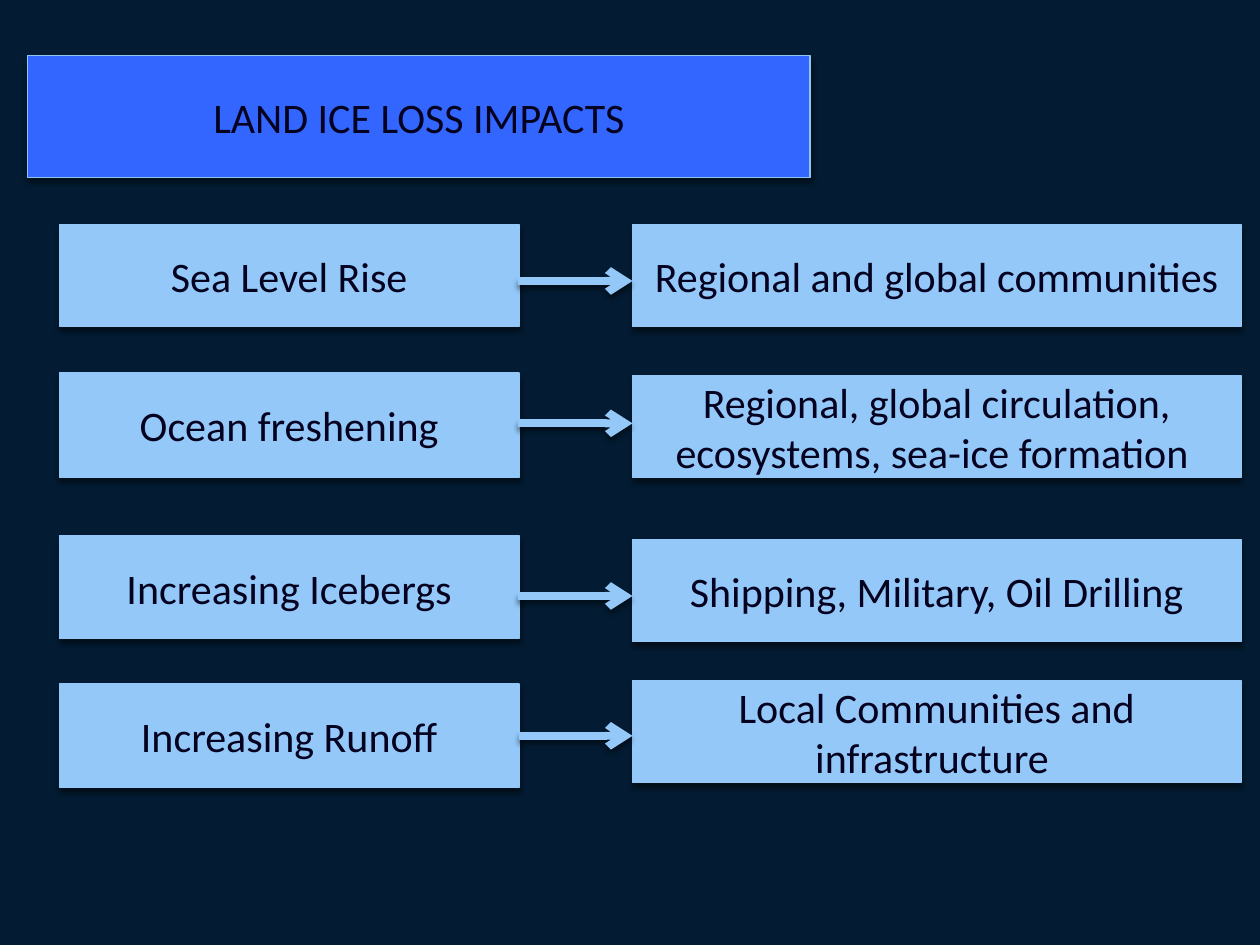
"""Build the slide on the impacts of land ice loss."""
from lxml import etree
from pptx import Presentation
from pptx.dml.color import RGBColor
from pptx.enum import shapes, text
from pptx.oxml import parse_xml
from pptx.oxml.ns import nsdecls, qn
from pptx.util import Inches, Pt

NAVY = RGBColor(0x03, 0x1C, 0x33)
BLUE = RGBColor(0x33, 0x66, 0xFF)
TITLE_EDGE = RGBColor(0x8D, 0xC7, 0xF0)
SKY = RGBColor(0x93, 0xC8, 0xF9)
INK = RGBColor(0x04, 0x02, 0x1F)


def add_shadow(item):
    item._element.spPr.append(parse_xml(
        f'<a:effectLst {nsdecls("a")}>'
        f'<a:outerShdw blurRad="{Pt(3)}" dist="{Pt(2.4)}" dir="5400000" rotWithShape="0">'
        '<a:srgbClr val="000000"><a:alpha val="45000"/></a:srgbClr>'
        '</a:outerShdw></a:effectLst>'))


def add_box(left, top, width, height, wording, fill=SKY, edge=SKY):
    box = slide.shapes.add_shape(
        shapes.MSO_SHAPE.RECTANGLE,
        Inches(left), Inches(top), Inches(width), Inches(height))
    box.fill.solid()
    box.fill.fore_color.rgb = fill
    box.line.color.rgb = edge
    box.line.width = Pt(0.79)
    add_shadow(box)
    frame = box.text_frame
    frame.word_wrap = True
    frame.vertical_anchor = text.MSO_ANCHOR.MIDDLE
    frame.text = wording
    paragraph = frame.paragraphs[0]
    paragraph.alignment = text.PP_ALIGN.CENTER
    font = paragraph.runs[0].font
    font.name = "Calibri"
    font.size = Pt(24)
    font.color.rgb = INK
    return box


prs = Presentation()
prs.slide_width = Inches(10)
prs.slide_height = Inches(7.5)
slide = prs.slides.add_slide(prs.slide_layouts[6])
slide.background.fill.solid()
slide.background.fill.fore_color.rgb = NAVY

add_box(0.22, 0.44, 6.21, 0.97, "LAND ICE LOSS IMPACTS", BLUE, TITLE_EDGE)

impacts = [
    ("Sea Level Rise", 1.78, 0.81, "Regional and global communities", 1.78, 2.23),
    ("Ocean freshening", 2.96, 0.83,
     "Regional, global circulation, ecosystems, sea-ice formation ", 2.98, 3.36),
    ("Increasing Icebergs", 4.25, 0.82, "Shipping, Military, Oil Drilling", 4.28, 4.73),
    ("Increasing Runoff", 5.43, 0.82, "Local Communities and infrastructure ", 5.4, 5.84),
]

for impact, impact_top, impact_height, affected, affected_top, arrow_y in impacts:
    cause = add_box(0.47, impact_top, 3.65, impact_height, impact)
    add_box(5.02, affected_top, 4.83, 0.81, affected)
    arrow = slide.shapes.add_connector(
        shapes.MSO_CONNECTOR.STRAIGHT,
        Inches(4.11), Inches(arrow_y), Inches(5.02), Inches(arrow_y))
    if abs(impact_top + impact_height / 2 - arrow_y) < 0.01:
        arrow.begin_connect(cause, 3)
        arrow.begin_y = arrow.end_y
    arrow.line.color.rgb = SKY
    arrow.line.width = Pt(4.5)
    etree.SubElement(arrow._element.spPr.find(qn("a:ln")), qn("a:tailEnd"), type="arrow")
    add_shadow(arrow)

prs.save("out.pptx")
